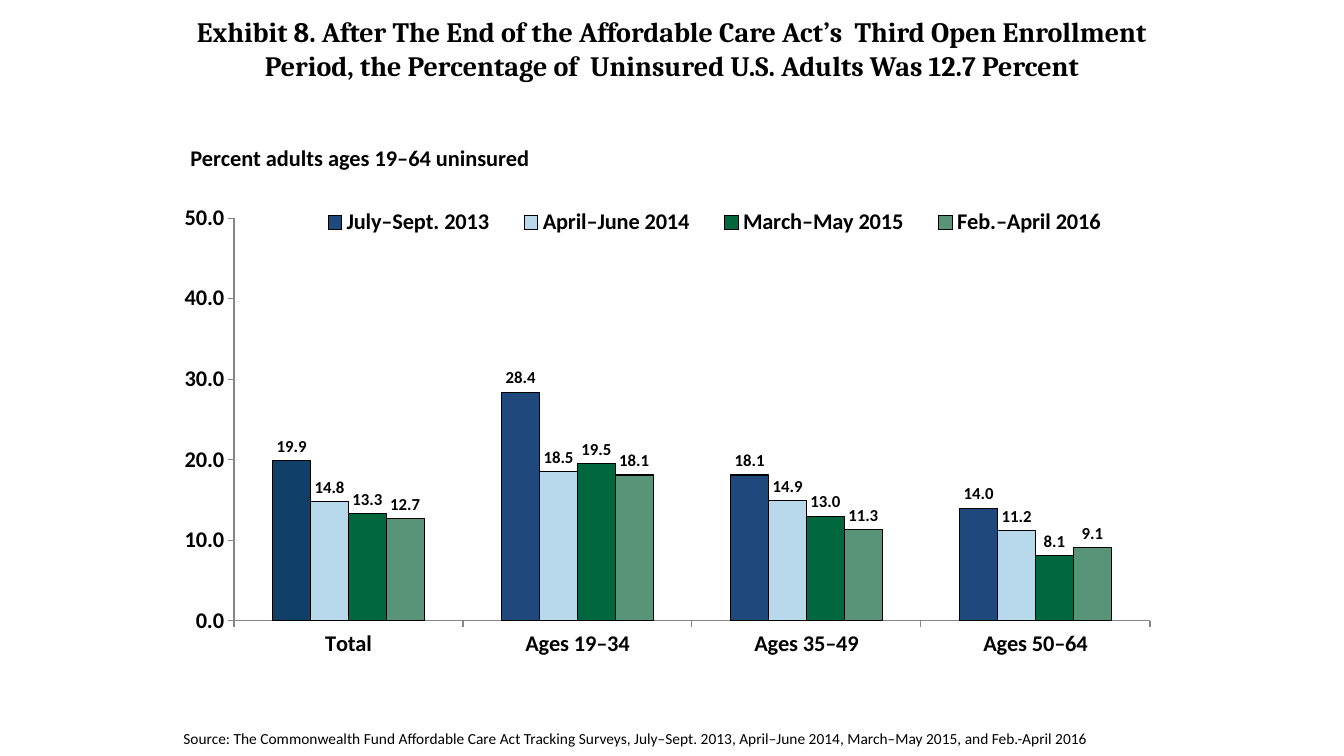
from lxml.etree import SubElement
from pptx import Presentation
from pptx.chart.data import CategoryChartData
from pptx.dml.color import RGBColor
from pptx.enum.chart import XL_CHART_TYPE as ChartType
from pptx.enum.chart import XL_LABEL_POSITION as LabelPosition
from pptx.enum.chart import XL_LEGEND_POSITION as LegendPosition
from pptx.enum.chart import XL_TICK_MARK as TickMark
from pptx.enum.text import PP_ALIGN as Align
from pptx.oxml import parse_xml
from pptx.oxml.ns import nsdecls, qn
from pptx.util import Cm, Pt

BLACK = "000000"
AXIS_GRAY = "868686"
FIRST_TOTAL_BAR = "104068"
AGE_GROUPS = ["Total", "Ages 19–34", "Ages 35–49", "Ages 50–64"]
SURVEYS = [
    ("July–Sept. 2013", "1F497D", (19.9, 28.4, 18.1, 14.0)),
    ("April–June 2014", "B8D9EC", (14.8, 18.5, 14.9, 11.2)),
    ("March–May 2015", "00673F", (13.3, 19.5, 13.0, 8.1)),
    ("Feb.–April 2016", "589478", (12.7, 18.1, 11.3, 9.1)),
]


def color(hex_string):
    """Return the colour for a hex string."""
    return RGBColor.from_string(hex_string)


def set_font(font, size, bold=True, name="Calibri"):
    """Give a font its face, size, weight and black colour."""
    font.name, font.size, font.bold = name, Pt(size), bold
    font.color.rgb = color(BLACK)


def add_text(slide, box, text, size, bold=True, name="Calibri", align=Align.LEFT):
    """Place one wrapped paragraph in the given box."""
    text_frame = slide.shapes.add_textbox(*map(Cm, box)).text_frame
    text_frame.word_wrap = True
    text_frame.text = text
    paragraph = text_frame.paragraphs[0]
    paragraph.alignment = align
    for run in paragraph.runs:
        set_font(run.font, size, bold, name)


def manual_layout(x, y, width, height, inner=False):
    """Return a chart layout element in fractions of the chart area."""
    layout = parse_xml(f"<c:layout {nsdecls('c')}><c:manualLayout/></c:layout>")
    settings = [("layoutTarget", "inner")] if inner else []
    settings += [("xMode", "edge"), ("yMode", "edge")]
    settings += [("x", x), ("y", y), ("w", width), ("h", height)]
    for tag, value in settings:
        SubElement(layout[0], qn(f"c:{tag}")).set("val", str(value))
    return layout


def paint_bar(bar_format, fill):
    """Fill a bar and outline it in black."""
    bar_format.fill.solid()
    bar_format.fill.fore_color.rgb = color(fill)
    bar_format.line.color.rgb = color(BLACK)
    bar_format.line.width = Pt(0.75)


def style_series(series, fill):
    """Paint a series and label its bars."""
    series.invert_if_negative = False
    paint_bar(series.format, fill)
    labels = series.data_labels
    set_font(labels.font, 12)
    labels.number_format, labels.number_format_is_linked = "0.0", False
    labels.position = LabelPosition.OUTSIDE_END
    labels.show_value = True


def style_axes(chart):
    """Set the scale, ticks and fonts of both axes."""
    value_axis = chart.value_axis
    value_axis.minimum_scale, value_axis.maximum_scale = 0, 50
    value_axis.major_unit = 10
    value_axis.has_major_gridlines = False
    value_axis.tick_labels.number_format = "0.0"
    value_axis.tick_labels.number_format_is_linked = False
    for axis in (chart.category_axis, value_axis):
        axis.major_tick_mark = TickMark.OUTSIDE
        axis.minor_tick_mark = TickMark.NONE
        axis.format.line.color.rgb = color(AXIS_GRAY)
        axis.format.line.width = Pt(0.75)
        set_font(axis.tick_labels.font, 16)


def style_legend(chart):
    """Lay the legend over the top of the plot."""
    chart.has_legend = True
    legend = chart.legend
    legend.position = LegendPosition.TOP
    legend.include_in_layout = False
    set_font(legend.font, 16)
    element = legend._element
    for layout in element.findall(qn("c:layout")):
        element.remove(layout)
    element.find(qn("c:legendPos")).addnext(manual_layout(0.12, 0.02, 0.85, 0.08))


def add_uninsured_chart(slide, box):
    """Place the clustered columns of uninsured rates in the given box."""
    data = CategoryChartData(number_format="0.0")
    data.categories = AGE_GROUPS
    for name, _, rates in SURVEYS:
        data.add_series(name, rates)
    frame = slide.shapes.add_chart(ChartType.COLUMN_CLUSTERED, *map(Cm, box), data)
    chart = frame.chart
    chart.has_title = False
    set_font(chart.font, 14)
    plot = chart.plots[0]
    plot.gap_width, plot.overlap = 205, 0
    plot.vary_by_categories = False
    for series, (_, fill, _) in zip(plot.series, SURVEYS):
        style_series(series, fill)
    paint_bar(plot.series[0].points[0].format, FIRST_TOTAL_BAR)
    style_axes(chart)
    style_legend(chart)
    plot_area = chart._chartSpace.chart.plotArea
    for layout in plot_area.findall(qn("c:layout")):
        plot_area.remove(layout)
    plot_area.insert(0, manual_layout(0.052, 0.051, 0.94, 0.841, inner=True))


def build_exhibit(slide, box):
    """Place the title, chart, caption and source in the given box."""
    left, top, width, height = box
    add_text(
        slide, (left, top + 0.25, width, 2.79),
        "Exhibit 8. After The End of the Affordable Care Act’s  Third Open Enrollment "
        "Period, the Percentage of  Uninsured U.S. Adults Was 12.7 Percent",
        20, name="Cambria", align=Align.CENTER,
    )
    add_uninsured_chart(slide, (left + 0.38, top + 4.88, 24.56, 12.07))
    add_text(
        slide, (left + 0.13, top + height - 0.81, 24.84, 0.74),
        "Source: The Commonwealth Fund Affordable Care Act Tracking Surveys, "
        "July–Sept. 2013, April–June 2014, March–May 2015, and Feb.-April 2016",
        11, bold=False,
    )
    add_text(
        slide, (left + 0.31, top + 3.51, 10.8, 0.94),
        "Percent adults ages 19–64 uninsured", 16,
    )


def main():
    """Build and save the presentation."""
    presentation = Presentation()
    presentation.slide_width, presentation.slide_height = Cm(33.87), Cm(19.05)
    slide = presentation.slides.add_slide(presentation.slide_layouts[6])
    build_exhibit(slide, (4.24, 0, 25.4, 19.05))
    presentation.save("out.pptx")


if __name__ == "__main__":
    main()
